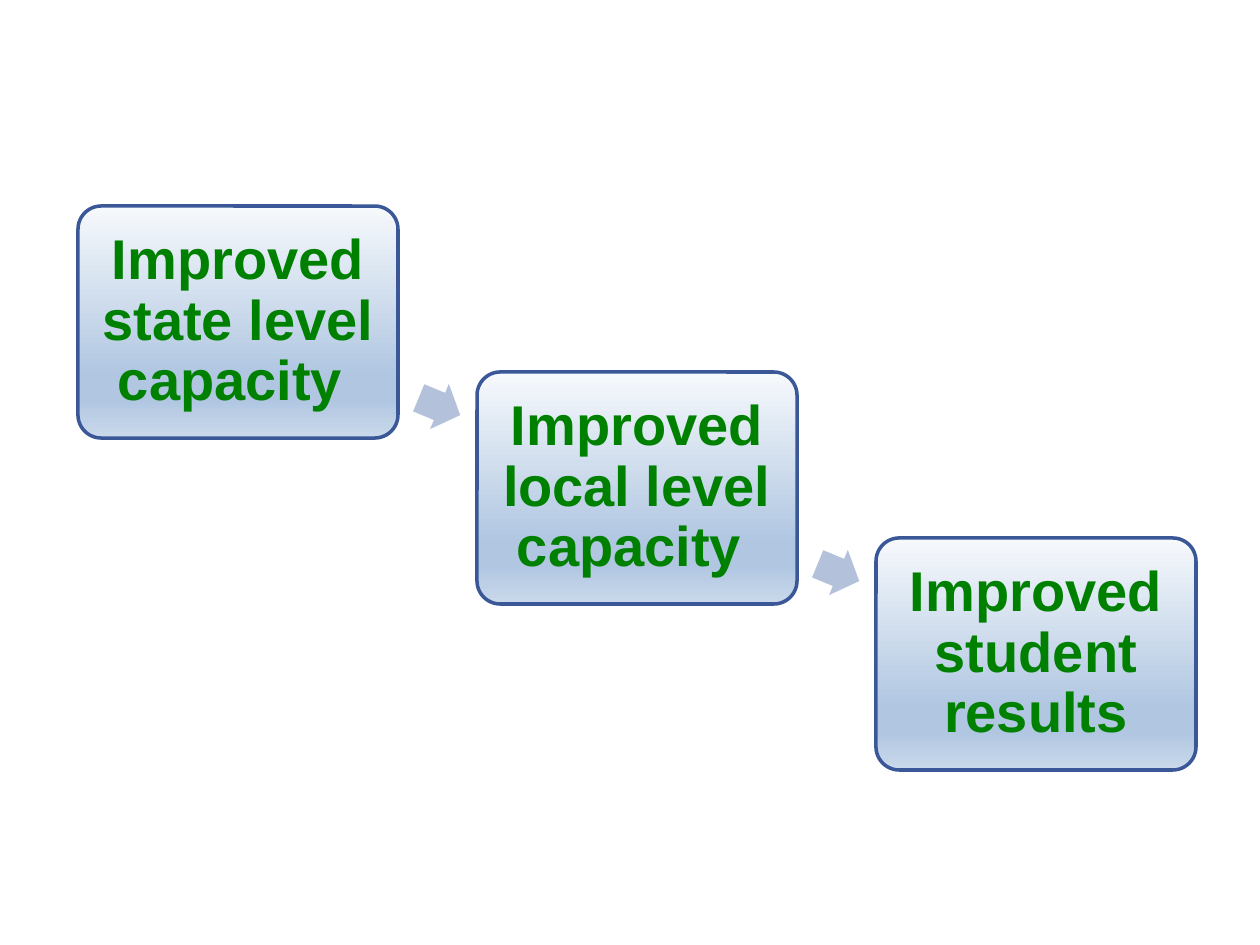
from copy import deepcopy

from pptx import Presentation
from pptx import util as u
from pptx.dml.color import RGBColor
from pptx.enum import shapes, text
from pptx.oxml.ns import qn

PX = 914400 // 126
COLORS = {"text": "008000", "outline": "3A5898", "arrow": "B3C1DB"}
GRADIENT = [(0, "F6F9FC"), (0.74, "B0C6E1"), (0.83, "B0C6E1"), (1, "CAD9EB")]
STEPS = [
    "Improved state level capacity ",
    "Improved local level capacity ",
    "Improved student results",
]
BOX_W, BOX_H = 320, 232
STEP_X, STEP_Y = 399, 166


def rgb(value):
    return RGBColor.from_string(value)


def add_shape(s, kind, x, y, w, h):
    sp = s.shapes.add_shape(kind, *(n * PX for n in (x, y, w, h)))
    sp.shadow.inherit = False
    return sp


def fill_gradient(sp):
    """Fill from top to bottom with the stops of GRADIENT."""
    sp.fill.gradient()
    sp.fill.gradient_angle = 270
    stop_list = sp._element.spPr.find(qn("a:gradFill")).find(qn("a:gsLst"))
    for _ in GRADIENT[2:]:
        stop_list.append(deepcopy(stop_list[0]))
    for stop, (position, color) in zip(sp.fill.gradient_stops, GRADIENT):
        stop.position = position
        stop.color.rgb = rgb(color)


def add_step(s, x, y, label):
    sp = add_shape(s, shapes.MSO_SHAPE.ROUNDED_RECTANGLE, x, y, BOX_W, BOX_H)
    sp.adjustments[0] = 0.1
    fill_gradient(sp)
    sp.line.color.rgb = rgb(COLORS["outline"])
    sp.line.width = u.Pt(2)

    tf = sp.text_frame
    tf.word_wrap = True
    tf.vertical_anchor = text.MSO_ANCHOR.MIDDLE
    tf.margin_left = tf.margin_right = tf.margin_top = tf.margin_bottom = 16 * PX
    p = tf.paragraphs[0]
    p.text = label
    p.alignment = text.PP_ALIGN.CENTER
    p.line_spacing = 0.9
    p.font.name = "Arial"
    p.font.size = u.Pt(32)
    p.font.bold = True
    p.font.color.rgb = rgb(COLORS["text"])


def add_arrow(s, x, y):
    """Point from the step at x, y to the next one down."""
    sp = add_shape(s, shapes.MSO_SHAPE.RIGHT_ARROW, x + BOX_W + 19, y + 176, 45, 49)
    sp.adjustments[0] = 0.6
    sp.adjustments[1] = 0.5
    sp.rotation = 22.5
    sp.fill.solid()
    sp.fill.fore_color.rgb = rgb(COLORS["arrow"])
    sp.line.fill.background()


def add_staircase(s, left, top):
    for i, label in enumerate(STEPS):
        x, y = left + i * STEP_X, top + i * STEP_Y
        add_step(s, x, y, label)
        if i < len(STEPS) - 1:
            add_arrow(s, x, y)


def main():
    prs = Presentation()
    prs.slide_width, prs.slide_height = u.Inches(10), u.Inches(7.5)
    s = prs.slides.add_slide(prs.slide_layouts[6])
    add_staircase(s, 78, 206)
    prs.save("out.pptx")


if __name__ == "__main__":
    main()
